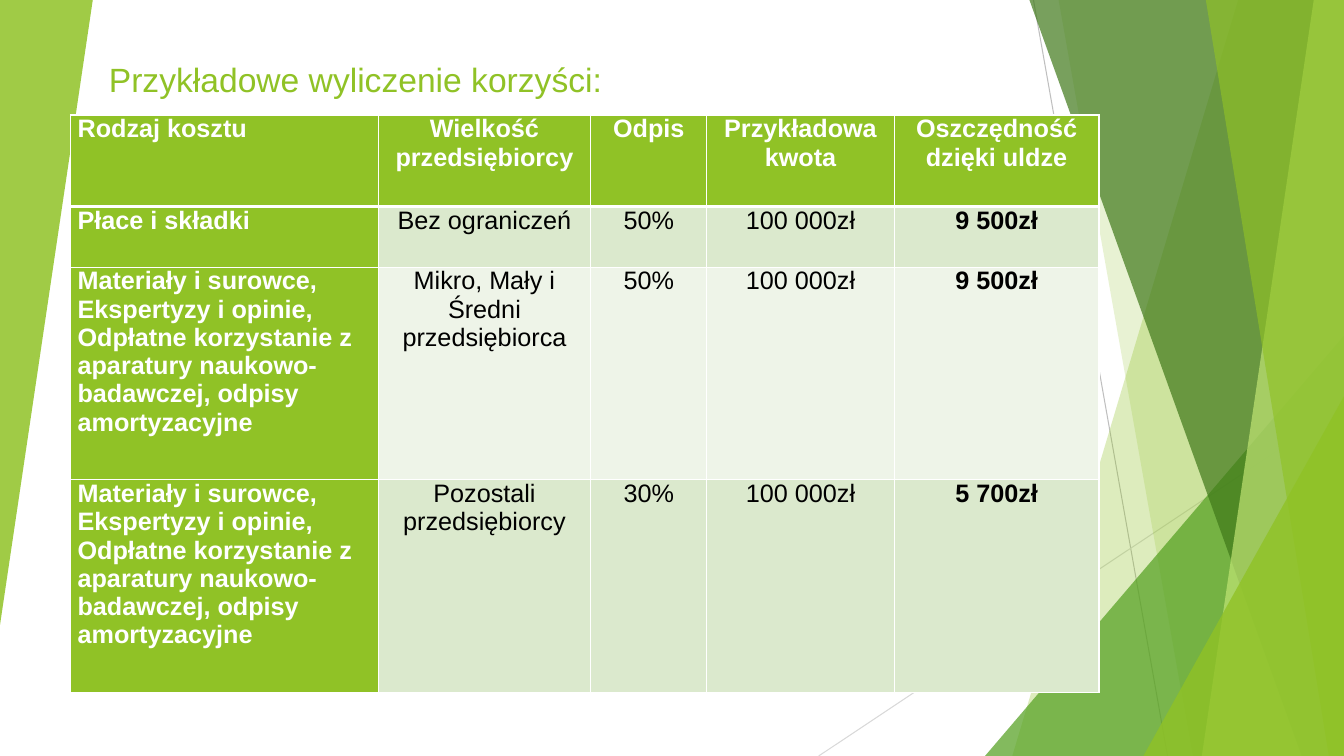
"""Build a slide with a table of tax relief benefits on a green faceted background."""
from lxml import etree
from pptx import Presentation
from pptx.dml.color import RGBColor
from pptx.enum.shapes import MSO_CONNECTOR, MSO_SHAPE
from pptx.enum.text import MSO_ANCHOR, PP_ALIGN
from pptx.oxml.ns import qn
from pptx.util import Inches, Pt

STRAIGHT = MSO_CONNECTOR.STRAIGHT
TRIANGLE = MSO_SHAPE.ISOSCELES_TRIANGLE
BOTTOM, TOP = MSO_ANCHOR.BOTTOM, MSO_ANCHOR.TOP
LEFT, CENTER = PP_ALIGN.LEFT, PP_ALIGN.CENTER
WIDTH, HEIGHT = 13.33, 7.5
COLORS = {
    "green": "90C226", "leaf": "54A021", "forest": "3F7819", "lime": "C0E474",
    "band": "DBE9CD", "pale": "EEF4E8", "white": "FFFFFF", "black": "000000",
    "gray": "BFBFBF", "silver": "D9D9D9",
}


def write_text(text_frame, text, size=18, color="black", bold=False, align=CENTER, anchor=TOP):
    """Put one formatted paragraph into a text frame."""
    text_frame.word_wrap = True
    text_frame.vertical_anchor = anchor
    paragraph = text_frame.paragraphs[0]
    paragraph.alignment = align
    run = paragraph.add_run()
    run.text = text
    run.font.name = "Arial"
    run.font.size = Pt(size)
    run.font.bold = bold
    run.font.color.rgb = RGBColor.from_string(COLORS[color])


def paint(shape, color, opacity):
    """Give a shape a translucent fill without outline or shadow."""
    shape.shadow.inherit = False
    shape.line.fill.background()
    shape.fill.solid()
    shape.fill.fore_color.rgb = RGBColor.from_string(COLORS[color])
    fill_color = shape._element.spPr.find(qn("a:solidFill")).find(qn("a:srgbClr"))
    etree.SubElement(fill_color, qn("a:alpha"), val=str(opacity * 1000))


presentation = Presentation()
presentation.slide_width = Inches(WIDTH)
presentation.slide_height = Inches(HEIGHT)
slide = presentation.slides.add_slide(presentation.slide_layouts[5])
shapes = slide.shapes

rays = [
    (10.25, 0, 11.58, HEIGHT, "gray"),
    (WIDTH, 4.03, 8.12, HEIGHT, "silver"),
]
for start_x, start_y, end_x, end_y, color in rays:
    ray = shapes.add_connector(
        STRAIGHT, Inches(start_x), Inches(start_y), Inches(end_x), Inches(end_y))
    ray.line.width = Pt(0.75)
    ray.line.color.rgb = RGBColor.from_string(COLORS[color])
    etree.SubElement(ray._element.spPr, qn("a:effectLst"))

facets = [
    ("panel", 12.28, 10.04, "green", 30),
    ("panel", 10.5, 11.83, "green", 20),
    ("corner", 9.77, 3.33, "leaf", 72),
    ("panel", 10.21, 12.91, "forest", 70),
    ("panel", 13.03, 11.92, "lime", 70),
    ("panel", 11.96, 13.18, "green", 65),
    ("corner", 11.34, 3.93, "green", 80),
]
for kind, first, second, color, opacity in facets:
    if kind == "panel":
        builder = shapes.build_freeform(Inches(first), 0)
        corners = [(WIDTH, 0), (WIDTH, HEIGHT), (second, HEIGHT)]
        builder.add_line_segments([(Inches(x), Inches(y)) for x, y in corners])
        facet = builder.convert_to_shape()
    else:
        facet = shapes.add_shape(
            TRIANGLE, Inches(first), Inches(second), Inches(WIDTH - first), Inches(HEIGHT - second))
        facet.adjustments[0] = 1
    paint(facet, color, opacity)

left_wedge = shapes.add_shape(TRIANGLE, 0, 0, Inches(0.92), Inches(6.2))
left_wedge.adjustments[0] = 1
left_wedge.rotation = 180
paint(left_wedge, "green", 85)

title = shapes.title
title.left, title.top = Inches(0.98), Inches(0.23)
title.width, title.height = Inches(5.91), Inches(0.8)
write_text(title.text_frame, "Przykładowe wyliczenie korzyści:",
           size=24, color="green", align=LEFT, anchor=BOTTOM)

materials = ("Materiały i surowce, Ekspertyzy i opinie, Odpłatne korzystanie z "
             "aparatury naukowo- badawczej, odpisy amortyzacyjne")
rows = [
    ["Rodzaj kosztu", "Wielkość przedsiębiorcy", "Odpis", "Przykładowa kwota",
     "Oszczędność dzięki uldze"],
    ["Płace i składki", "Bez ograniczeń", "50%", "100 000zł", "9 500zł"],
    [materials, "Mikro, Mały i Średni przedsiębiorca", "50%", "100 000zł", "9 500zł"],
    [materials, "Pozostali przedsiębiorcy", "30%", "100 000zł", "5 700zł"],
]
column_widths = [3.05, 2.11, 1.15, 1.86, 2.03]
row_heights = [0.91, 0.6, 2.11, 2.11]
row_fills = ["green", "band", "pale", "band"]
table = shapes.add_table(
    len(rows), len(column_widths), Inches(0.7), Inches(1.14),
    Inches(sum(column_widths)), Inches(sum(row_heights))).table
for column, width in zip(table.columns, column_widths):
    column.width = Inches(width)
for row, height in zip(table.rows, row_heights):
    row.height = Inches(height)

for row_index, texts in enumerate(rows):
    for column_index, text in enumerate(texts):
        cell = table.cell(row_index, column_index)
        is_heading = row_index == 0 or column_index == 0
        is_saving = column_index == len(texts) - 1
        cell.margin_left = cell.margin_right = Inches(0.07)
        cell.margin_top = cell.margin_bottom = 0
        write_text(cell.text_frame, text,
                   color="white" if is_heading else "black",
                   bold=is_heading or is_saving,
                   align=CENTER if column_index else LEFT)
        cell_properties = cell._tc.get_or_add_tcPr()
        for side in ("L", "R", "T", "B"):
            under_header = (row_index, side) in ((0, "B"), (1, "T"))
            border = etree.SubElement(
                cell_properties, qn(f"a:ln{side}"), w=str(Pt(3 if under_header else 1)))
            border_fill = etree.SubElement(border, qn("a:solidFill"))
            etree.SubElement(border_fill, qn("a:srgbClr"), val=COLORS["white"])
        cell.fill.solid()
        cell.fill.fore_color.rgb = RGBColor.from_string(
            COLORS["green" if is_heading else row_fills[row_index]])

presentation.save("out.pptx")
